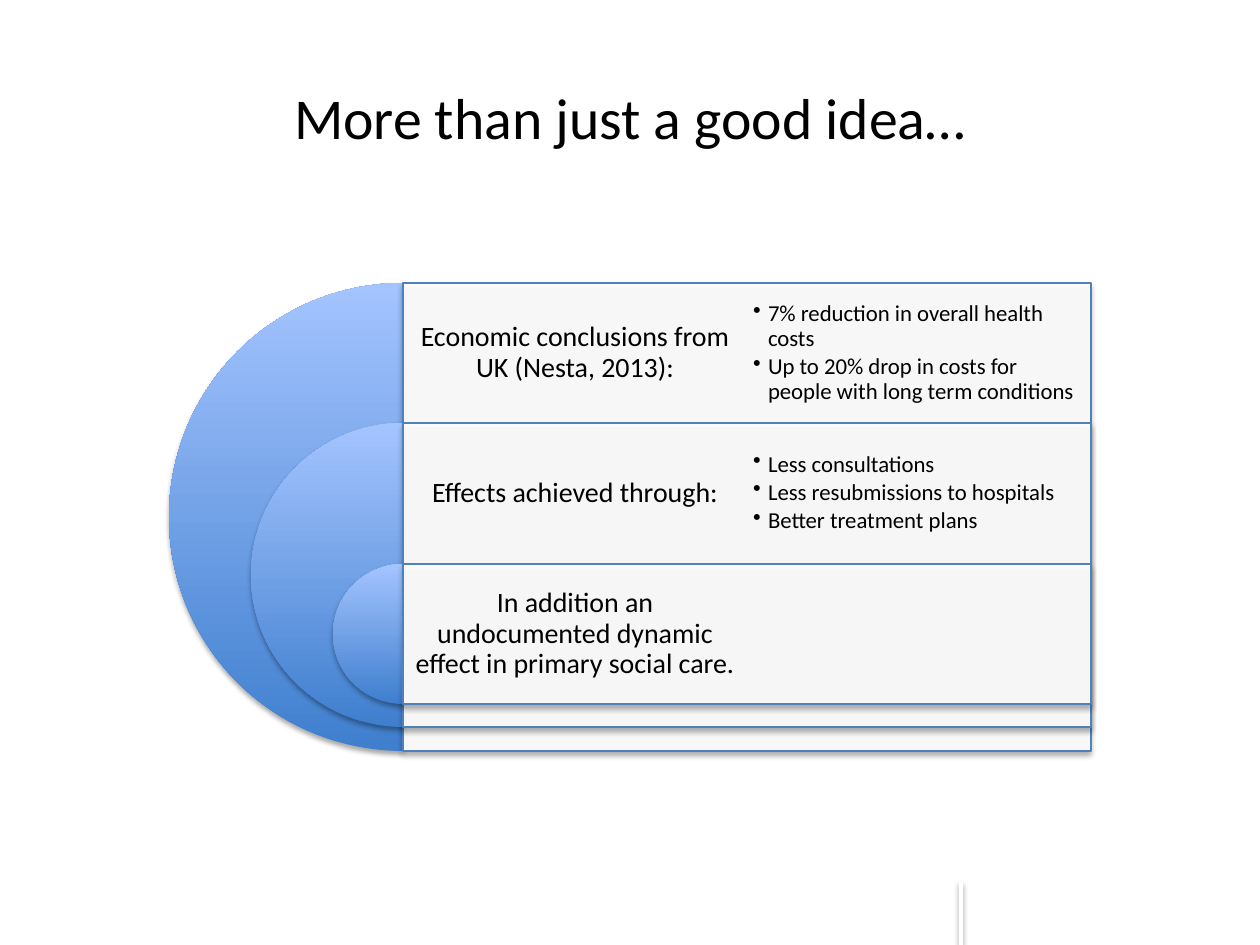
from lxml.etree import SubElement
from pptx import Presentation
from pptx.dml.color import RGBColor
from pptx.enum.shapes import MSO_CONNECTOR, MSO_SHAPE
from pptx.enum.text import MSO_ANCHOR, MSO_AUTO_SIZE, PP_ALIGN
from pptx.oxml.ns import qn
from pptx.util import Emu, Pt

EMU_PER_PX = 914400 / 126
FONT = "Calibri"
CENTRE_X = 403
PANEL_RIGHT = 1091
COLUMN_WIDTH = (PANEL_RIGHT - CENTRE_X) // 2
ROW_HEIGHT = 140
LAYERS = [
    (283, 234, "Economic conclusions from UK (Nesta, 2013):",
     ["7% reduction in overall health costs",
      "Up to 20% drop in costs for people with long term conditions"]),
    (423, 152, "Effects achieved through:",
     ["Less consultations", "Less resubmissions to hospitals", "Better treatment plans"]),
    (564, 70, "In addition an undocumented dynamic effect in primary social care.", []),
]


def px(value):
    """Turn pixels into EMU."""
    return Emu(round(value * EMU_PER_PX))


def box(left, top, width, height):
    """Return a pixel box as EMU lengths."""
    return [px(value) for value in (left, top, width, height)]


def color(hex_code):
    """Return the colour of a hex string."""
    return RGBColor.from_string(hex_code)


def add_shadow(shape, opacity, distance):
    """Give a shape a soft black shadow that falls straight down."""
    effects = SubElement(shape._element.spPr, qn("a:effectLst"))
    shadow = SubElement(effects, qn("a:outerShdw"), blurRad=str(Pt(3.1)),
                        dist=str(Pt(distance)), dir="5400000", rotWithShape="0")
    black = SubElement(shadow, qn("a:srgbClr"), val="000000")
    SubElement(black, qn("a:alpha"), val=str(opacity * 1000))


def add_run(paragraph, text, size):
    """Add a black run to a paragraph."""
    run = paragraph.add_run()
    run.text = text
    run.font.name = FONT
    run.font.size = Pt(size)
    run.font.color.rgb = color("000000")


def set_title(slide, text):
    """Place and fill the title placeholder."""
    title = slide.shapes.title
    title.left, title.top, title.width, title.height = box(63, 38, 1134, 157)
    frame = title.text_frame
    frame.auto_size = MSO_AUTO_SIZE.NONE
    frame.vertical_anchor = MSO_ANCHOR.MIDDLE
    paragraph = frame.paragraphs[0]
    paragraph.alignment = PP_ALIGN.CENTER
    add_run(paragraph, text, 33)


def add_half_disc(slide, top, radius):
    """Add the left half of a disc with a vertical blue gradient."""
    pie = slide.shapes.add_shape(
        MSO_SHAPE.PIE, *box(CENTRE_X - radius, top, 2 * radius, 2 * radius))
    pie.adjustments[0] = 54
    pie.adjustments[1] = 162
    pie.fill.gradient()
    pie.fill.gradient_angle = 90
    for stop, position, hex_code in zip(pie.fill.gradient_stops, (0, 1), ("3F7FCE", "A4C4FF")):
        stop.position = position
        stop.color.rgb = color(hex_code)
    pie.line.fill.background()
    add_shadow(pie, 35, 1.8)


def add_panel(slide, top, height):
    """Add a nearly opaque white panel with a blue outline."""
    panel = slide.shapes.add_shape(
        MSO_SHAPE.RECTANGLE, *box(CENTRE_X, top, PANEL_RIGHT - CENTRE_X, height))
    panel.fill.solid()
    panel.fill.fore_color.rgb = color("FFFFFF")
    white = panel._element.spPr.find(qn("a:solidFill")).find(qn("a:srgbClr"))
    SubElement(white, qn("a:alpha"), val="90000")
    panel.line.color.rgb = color("4F81BD")
    panel.line.width = Pt(0.75)
    add_shadow(panel, 35, 1.8)


def add_text_frame(slide, left, top, inset):
    """Add a wrapped, vertically centred text box and return its frame."""
    frame = slide.shapes.add_textbox(*box(left, top, COLUMN_WIDTH, ROW_HEIGHT)).text_frame
    frame.word_wrap = True
    frame.vertical_anchor = MSO_ANCHOR.MIDDLE
    frame.margin_left = frame.margin_top = px(inset)
    frame.margin_right = frame.margin_bottom = px(inset)
    return frame


def add_heading(slide, top, text):
    """Add the centred heading of a layer."""
    paragraph = add_text_frame(slide, CENTRE_X, top, 9).paragraphs[0]
    paragraph.alignment = PP_ALIGN.CENTER
    paragraph.line_spacing = 0.9
    add_run(paragraph, text, 16)


def add_bullets(slide, top, items):
    """Add the bulleted details of a layer."""
    frame = add_text_frame(slide, CENTRE_X + COLUMN_WIDTH, top, 6)
    for index, item in enumerate(items):
        paragraph = frame.add_paragraph() if index else frame.paragraphs[0]
        properties = paragraph._p.get_or_add_pPr()
        properties.set("marL", str(px(15)))
        properties.set("indent", str(-px(15)))
        SubElement(properties, qn("a:buChar"), char="•")
        paragraph.level = 1
        paragraph.alignment = PP_ALIGN.LEFT
        paragraph.line_spacing = 0.9
        paragraph.space_after = Pt(2)
        add_run(paragraph, item, 13)


def add_footer_divider(slide):
    """Add the white shadowed divider at the foot of the slide."""
    divider = slide.shapes.add_connector(
        MSO_CONNECTOR.STRAIGHT, px(961), px(882), px(961), px(945))
    divider.line.color.rgb = color("FFFFFF")
    divider.line.width = Pt(2)
    add_shadow(divider, 38, 1.6)


def main():
    """Build and save the slide."""
    presentation = Presentation()
    presentation.slide_width, presentation.slide_height = px(1260), px(945)
    slide = presentation.slides.add_slide(presentation.slide_layouts[5])
    add_footer_divider(slide)
    set_title(slide, "More than just a good idea…")
    for top, radius, heading, items in LAYERS:
        add_half_disc(slide, top, radius)
        add_panel(slide, top, 2 * radius)
        add_heading(slide, top, heading)
    for top, radius, heading, items in LAYERS:
        if items:
            add_bullets(slide, top, items)
    presentation.save("out.pptx")


if __name__ == "__main__":
    main()
